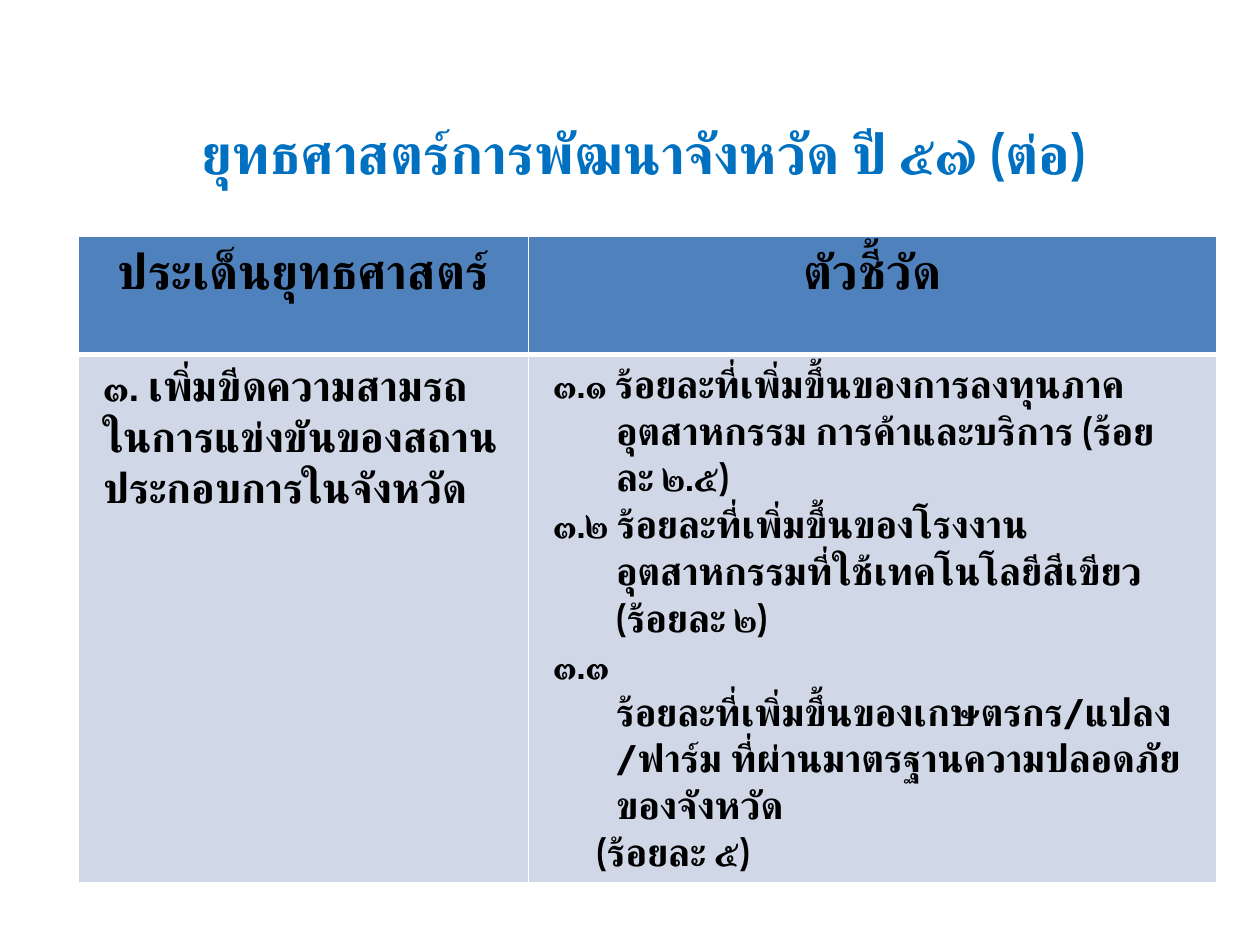
from dataclasses import dataclass

from lxml import etree
from pptx import Presentation
from pptx.dml.color import RGBColor
from pptx.enum.lang import MSO_LANGUAGE_ID
from pptx.enum.text import MSO_ANCHOR, PP_ALIGN
from pptx.oxml.ns import qn
from pptx.util import Cm, Pt

LEFT, CENTER = PP_ALIGN.LEFT, PP_ALIGN.CENTER
MIDDLE = MSO_ANCHOR.MIDDLE
THAI = MSO_LANGUAGE_ID.THAI


@dataclass(frozen=True)
class Theme:
    font: str = "Cabin"
    title_color: str = "0070C0"
    text_color: str = "000000"
    header_fill: str = "4F81BD"
    body_fill: str = "D0D8E8"
    border: str = "FFFFFF"
    title_size: int = 32
    header_size: int = 28
    issue_size: int = 24
    indicator_size: int = 22
    thin: float = 1
    thick: float = 3


@dataclass(frozen=True)
class Para:
    text: str
    size: int
    color: str
    align: PP_ALIGN = LEFT
    margin: float = 0
    indent: float = 0


@dataclass(frozen=True)
class CellSpec:
    paras: list[Para]
    fill: str
    top: float
    bottom: float


THEME = Theme()
HANGING = 1.27


def header(text: str) -> CellSpec:
    para = Para(text, THEME.header_size, THEME.text_color, CENTER)
    return CellSpec([para], THEME.header_fill, THEME.thin, THEME.thick)


def body(paras: list[Para]) -> CellSpec:
    return CellSpec(paras, THEME.body_fill, THEME.thick, THEME.thin)


def indicator(text: str, margin: float = HANGING, indent: float = -HANGING) -> Para:
    return Para(text, THEME.indicator_size, THEME.text_color, LEFT, margin, indent)


TITLE = Para("ยุทธศาสตร์การพัฒนาจังหวัด ปี ๕๗ (ต่อ)",
             THEME.title_size, THEME.title_color, CENTER)
ISSUE = Para("๓. เพิ่มขีดความสามรถในการแข่งขันของสถานประกอบการในจังหวัด",
             THEME.issue_size, THEME.text_color)
INDICATORS = [
    indicator("๓.๑ ร้อยละที่เพิ่มขึ้นของการลงทุนภาคอุตสาหกรรม การค้าและบริการ (ร้อยละ ๒.๕)"),
    indicator("๓.๒ ร้อยละที่เพิ่มขึ้นของโรงงานอุตสาหกรรมที่ใช้เทคโนโลยีสีเขียว (ร้อยละ ๒)"),
    indicator("๓.๓ ร้อยละที่เพิ่มขึ้นของเกษตรกร/แปลง/ฟาร์ม ที่ผ่านมาตรฐานความปลอดภัยของจังหวัด"),
    indicator("(ร้อยละ ๕)", margin=0.87, indent=0),
]
ROWS = [
    [header("ประเด็นยุทธศาสตร์"), header("ตัวชี้วัด")],
    [body([ISSUE]), body(INDICATORS)],
]
COLUMN_WIDTHS = [9.07, 13.87]
ROW_HEIGHTS = [2.39, 10.24]


def write_paragraphs(tf, paras: list[Para]) -> None:
    tf.word_wrap = True
    for i, para in enumerate(paras):
        p = tf.paragraphs[0] if i == 0 else tf.add_paragraph()
        p.alignment = para.align
        pPr = p._p.get_or_add_pPr()
        pPr.set("marL", str(Cm(para.margin)))
        pPr.set("indent", str(Cm(para.indent)))
        r = p.add_run()
        r.text = para.text
        r.font.name = THEME.font
        r.font.size = Pt(para.size)
        r.font.bold = True
        r.font.color.rgb = RGBColor.from_string(para.color)
        r.font.language_id = THAI
        # Thai glyphs take the complex-script typeface
        etree.SubElement(r._r.get_or_add_rPr(), qn("a:cs"), typeface=THEME.font)


def set_borders(cell, top: float, bottom: float) -> None:
    """Draw the four edges; call before the cell's fill is set."""
    tcPr = cell._tc.get_or_add_tcPr()
    edges = {"lnL": THEME.thin, "lnR": THEME.thin, "lnT": top, "lnB": bottom}
    for tag, width in edges.items():
        ln = etree.SubElement(tcPr, qn(f"a:{tag}"), w=str(Pt(width)))
        fill = etree.SubElement(ln, qn("a:solidFill"))
        etree.SubElement(fill, qn("a:srgbClr"), val=THEME.border)


def fill_cell(cell, content: CellSpec) -> None:
    set_borders(cell, content.top, content.bottom)
    cell.fill.solid()
    cell.fill.fore_color.rgb = RGBColor.from_string(content.fill)
    cell.margin_left = cell.margin_right = Cm(0.5)
    cell.margin_top = cell.margin_bottom = Cm(0.13)
    write_paragraphs(cell.text_frame, content.paras)


def add_strategy_table(slide) -> None:
    frame = slide.shapes.add_table(
        len(ROW_HEIGHTS), len(COLUMN_WIDTHS), Cm(1.58), Cm(4.76),
        Cm(sum(COLUMN_WIDTHS)), Cm(sum(ROW_HEIGHTS)))
    table = frame.table
    for column, width in zip(table.columns, COLUMN_WIDTHS):
        column.width = Cm(width)
    for row, height, contents in zip(table.rows, ROW_HEIGHTS, ROWS):
        row.height = Cm(height)
        for cell, content in zip(row.cells, contents):
            fill_cell(cell, content)


def add_title(slide) -> None:
    box = slide.shapes.add_textbox(Cm(1.55), Cm(1.96), Cm(22.86), Cm(2.21))
    box.text_frame.vertical_anchor = MIDDLE
    write_paragraphs(box.text_frame, [TITLE])


def main() -> None:
    prs = Presentation()
    prs.slide_width, prs.slide_height = Cm(25.4), Cm(19.05)
    slide = prs.slides.add_slide(prs.slide_layouts[6])
    add_strategy_table(slide)
    add_title(slide)
    prs.save("out.pptx")


if __name__ == "__main__":
    main()
